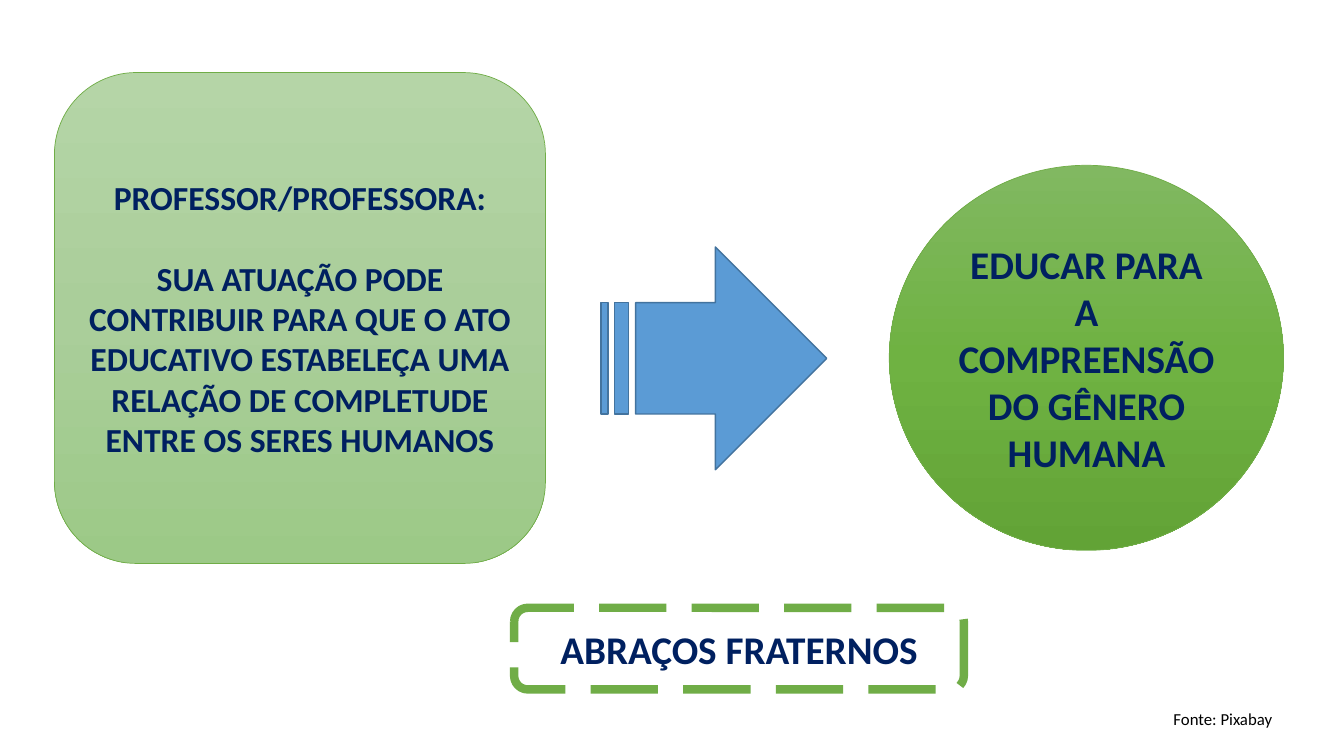
from copy import deepcopy

from pptx import Presentation
from pptx.dml.color import RGBColor
from pptx.enum import dml, shapes, text
from pptx.oxml.ns import qn
from pptx.util import Inches, Pt

THEME = {
    "font": "Calibri",
    "ink": "002060", "black": "000000", "white": "FFFFFF",
    "green": "70AD47", "blue": "5B9BD5", "dark_blue": "43739E",
    "strong_green": ("81B861", "6FB242", "62A336"),
    "soft_green": ("B5D5A7", "AACE9A", "9CC987"),
    "large": 28, "medium": 24, "small": 12,
    "paragraph_gap": 29,
}

SHAPE = shapes.MSO_SHAPE
PANELS = [
    {"kind": SHAPE.OVAL, "at": (8.82, 1.64, 3.91, 3.82),
     "fill": "strong_green", "line": ("green", 0.5), "size": "large",
     "text": ["EDUCAR PARA A COMPREENSÃO DO GÊNERO HUMANA"]},
    {"kind": SHAPE.ROUNDED_RECTANGLE, "at": (0.54, 0.72, 4.87, 4.87),
     "fill": "soft_green", "line": ("green", 0.5), "size": "medium",
     "text": ["PROFESSOR/PROFESSORA:",
              "SUA ATUAÇÃO PODE CONTRIBUIR PARA QUE O ATO EDUCATIVO ESTABELEÇA "
              "UMA RELAÇÃO DE COMPLETUDE ENTRE OS SERES HUMANOS"]},
    {"kind": SHAPE.STRIPED_RIGHT_ARROW, "at": (5.96, 2.45, 2.24, 2.21),
     "fill": "blue", "line": ("dark_blue", 1), "size": "medium", "text": []},
    {"kind": SHAPE.ROUNDED_RECTANGLE, "at": (5.1, 6.03, 4.46, 0.81),
     "fill": "white", "line": ("green", 6), "size": "large",
     "dash": dml.MSO_LINE.LONG_DASH, "text": ["ABRAÇOS FRATERNOS"]},
]
CREDIT = {"at": (11.54, 6.98, 1.19, 0.3), "text": "Fonte: Pixabay"}


def rgb(name):
    return RGBColor.from_string(THEME[name])


def set_font(p, size, color, bold=False):
    formats = {"name": THEME["font"], "size": Pt(THEME[size]), "bold": bold}
    for r in p.runs:
        for key, value in formats.items():
            setattr(r.font, key, value)
        r.font.color.rgb = rgb(color)


def fill_gradient(sp, colors):
    """Fill from top to bottom with evenly spaced colours."""
    sp.fill.gradient()
    sp.fill.gradient_angle = 270
    stop_list = sp._element.spPr.find(qn("a:gradFill")).find(qn("a:gsLst"))
    while len(stop_list) < len(colors):
        stop_list.append(deepcopy(stop_list[0]))
    for i, (stop, color) in enumerate(zip(sp.fill.gradient_stops, colors)):
        stop.position = i / (len(colors) - 1)
        stop.color.rgb = RGBColor.from_string(color)


def add_panel(s, panel):
    sp = s.shapes.add_shape(panel["kind"], *map(Inches, panel["at"]))
    sp.shadow.inherit = False
    colors = THEME[panel["fill"]]
    if isinstance(colors, tuple):
        fill_gradient(sp, colors)
    else:
        sp.fill.solid()
        sp.fill.fore_color.rgb = rgb(panel["fill"])
    line_color, line_width = panel["line"]
    sp.line.color.rgb = rgb(line_color)
    sp.line.width = Pt(line_width)
    if "dash" in panel:
        sp.line.dash_style = panel["dash"]
    tf = sp.text_frame
    tf.word_wrap = True
    tf.vertical_anchor = text.MSO_ANCHOR.MIDDLE
    for i, line in enumerate(panel["text"]):
        p = tf.add_paragraph() if i else tf.paragraphs[0]
        p.text = line
        p.alignment = text.PP_ALIGN.CENTER
        if i:
            p.space_before = Pt(THEME["paragraph_gap"])
        set_font(p, panel["size"], "ink", bold=True)


def add_credit(s):
    tf = s.shapes.add_textbox(*map(Inches, CREDIT["at"])).text_frame
    tf.word_wrap = False
    tf.auto_size = text.MSO_AUTO_SIZE.SHAPE_TO_FIT_TEXT
    p = tf.paragraphs[0]
    p.text = CREDIT["text"]
    set_font(p, "small", "black")


def main():
    prs = Presentation()
    prs.slide_width, prs.slide_height = Inches(13.33), Inches(7.5)
    s = prs.slides.add_slide(prs.slide_layouts[6])
    add_credit(s)
    for panel in PANELS:
        add_panel(s, panel)
    prs.save("out.pptx")


if __name__ == "__main__":
    main()
